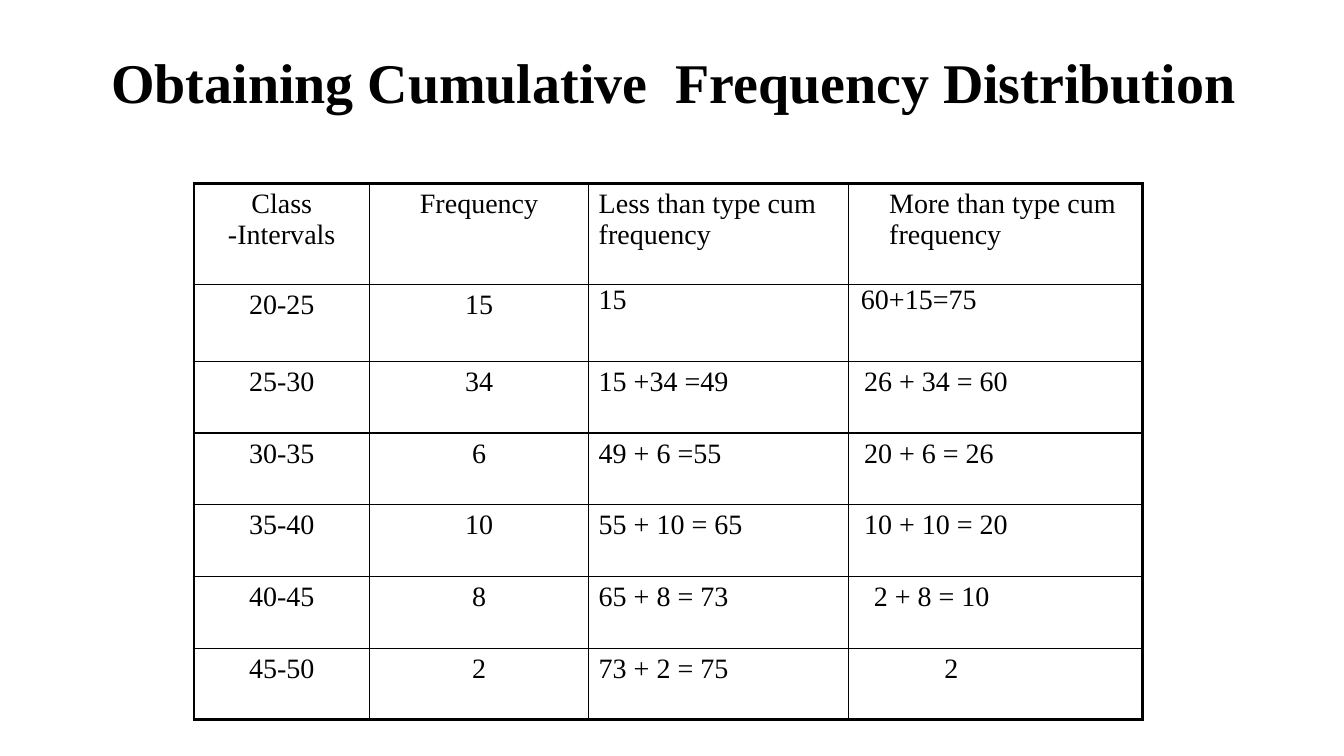
"""Build a slide with a table of cumulative frequencies."""
from lxml import etree
from pptx import Presentation
from pptx.dml.color import RGBColor
from pptx.enum.text import MSO_ANCHOR, PP_ALIGN
from pptx.oxml.ns import qn
from pptx.util import Pt

LEFT, CENTER = PP_ALIGN.LEFT, PP_ALIGN.CENTER
MIDDLE = MSO_ANCHOR.MIDDLE
theme = {"ink": "000000", "font": "Times New Roman", "title": 40, "body": 20,
         "thick": 2.25, "line": 1, "thin": 0.75}


def format_text(par, size, bold=False):
    look = {"name": theme["font"], "size": Pt(size), "bold": bold}
    for key, value in look.items():
        setattr(par.font, key, value)
    par.font.color.rgb = RGBColor.from_string(theme["ink"])


def add_edge(cell, index, side, width):
    line = etree.Element(qn("a:ln" + side), w=str(Pt(width)))
    fill = etree.SubElement(line, qn("a:solidFill"))
    etree.SubElement(fill, qn("a:srgbClr"), val=theme["ink"])
    cell._tc.get_or_add_tcPr().insert(index, line)


deck = Presentation()
deck.slide_width, deck.slide_height = Pt(960), Pt(540)
slide = deck.slides.add_slide(deck.slide_layouts[6])

title = slide.shapes.add_textbox(Pt(78.5), Pt(38), Pt(831.5), Pt(45)).text_frame
layout = {"margin_left": Pt(1), "margin_top": Pt(1), "margin_right": 0,
          "margin_bottom": 0, "vertical_anchor": MIDDLE, "word_wrap": True}
for key, value in layout.items():
    setattr(title, key, value)
title.text = "Obtaining Cumulative  Frequency Distribution"
head = title.paragraphs[0]
head.line_spacing = 0.9
format_text(head, theme["title"], True)

rows = [
    ("Class\n-Intervals", "Frequency", "Less than type cum frequency",
     "More than type cum frequency"),
    ("20-25", "15", "15", "60+15=75"),
    ("25-30", "34", "15 +34 =49", "26 + 34 = 60"),
    ("30-35", "6", "49 + 6 =55", "20 + 6 = 26"),
    ("35-40", "10", "55 + 10 = 65", "10 + 10 = 20"),
    ("40-45", "8", "65 + 8 = 73", "2 + 8 = 10"),
    ("45-50", "2", "73 + 2 = 75", "2"),
]
widths = [125.5, 156.5, 185.7, 210]
heights = [72.5, 54.7] + [51.2] * 5
indents = [29, 8.8, 11, 11, 11, 18, 68.5]
edges = [theme[name] for name in ("thick", "line", "line", "thin", "thick")]
rules = [theme["thick"]] + [theme["line"]] * 6 + [theme["thick"]]

frame = slide.shapes.add_table(len(rows), len(widths), Pt(138.5), Pt(131),
                               Pt(sum(widths)), Pt(sum(heights)))
table = frame.table
table.first_row = table.horz_banding = False
for col, width in zip(table.columns, widths):
    col.width = Pt(width)
for row, height in zip(table.rows, heights):
    row.height = Pt(height)

for r, texts in enumerate(rows):
    for c, text in enumerate(texts):
        cell = table.cell(r, c)
        tight = r == 1 and c > 1
        indent = [0, 0, 7.2, indents[r]][c]
        pads = {"margin_left": Pt(indent), "margin_top": Pt(0 if tight else 3.6),
                "margin_right": 0, "margin_bottom": 0}
        for key, value in pads.items():
            setattr(cell, key, value)
        cell.text = text
        for par in cell.text_frame.paragraphs:
            par.alignment = CENTER if c < 2 else LEFT
            format_text(par, theme["body"])
        first = cell.text_frame.paragraphs[0]
        if tight:
            first.line_spacing = Pt(22)
        else:
            first.space_before = Pt(3.6)
        cell.fill.background()
        sides = {"L": edges[c], "R": edges[c + 1], "T": rules[r], "B": rules[r + 1]}
        for index, (side, width) in enumerate(sides.items()):
            add_edge(cell, index, side, width)

deck.save("out.pptx")
